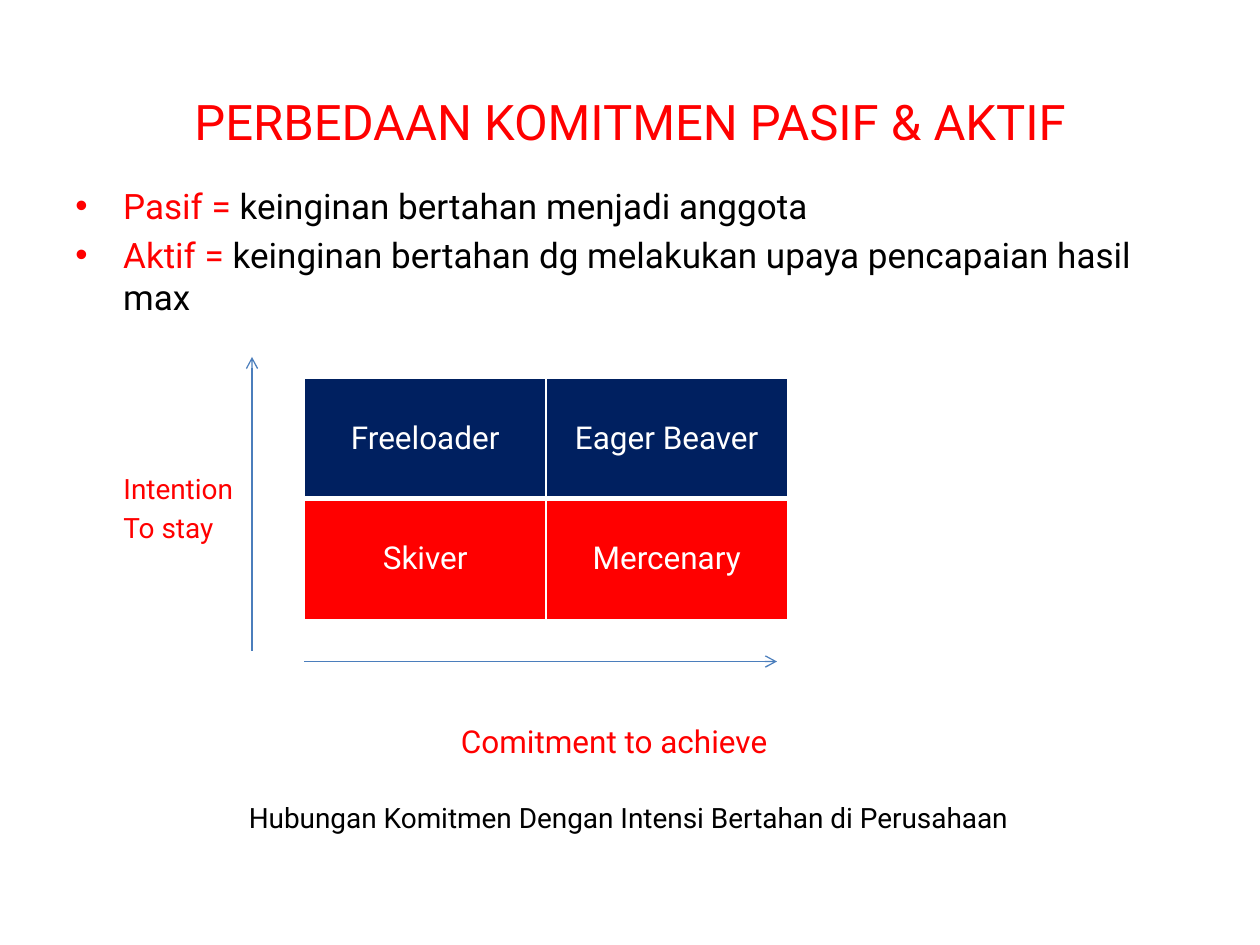
from lxml.etree import SubElement
from pptx import Presentation
from pptx.dml.color import RGBColor
from pptx.enum.shapes import MSO_CONNECTOR
from pptx.enum.text import MSO_ANCHOR, MSO_AUTO_SIZE, PP_ALIGN
from pptx.oxml.ns import qn
from pptx.util import Inches, Pt

COLORS = {"red": "FF0000", "navy": "002060", "black": "000000",
          "white": "FFFFFF", "axis": "4B7EBC"}
FONT = "Roboto"
UNITS_PER_INCH = 12
DEFINITIONS = [
    ("Pasif =", " keinginan bertahan menjadi anggota"),
    ("Aktif =", " keinginan bertahan dg melakukan upaya pencapaian hasil max"),
]
QUADRANTS = [
    ("navy", ("Freeloader", "Eager Beaver")),
    ("red", ("Skiver", "Mercenary")),
]
LABELS = [
    ((11.76, 44.9, 12, 8), ("Intention", "To stay"), 16, "red"),
    ((43.9, 68.8, 36, 4), ("Comitment to achieve",), 18, "red"),
    ((23.7, 76.2, 84, 4),
     ("Hubungan Komitmen Dengan Intensi Bertahan di Perusahaan",), 16, "black"),
]
AXES = [(29, 63, 74, 63), (24, 62, 24, 34)]


def grid(*units):
    """Convert grid units to slide lengths."""
    return [Inches(unit / UNITS_PER_INCH) for unit in units]


def rgb(name):
    """Return a named palette colour."""
    return RGBColor.from_string(COLORS[name])


def add_run(paragraph, text, size, color):
    """Append one formatted run."""
    run = paragraph.add_run()
    run.text = text
    run.font.name = FONT
    run.font.size = Pt(size)
    run.font.color.rgb = rgb(color)


def add_paragraph(frame, index, size):
    """Return the paragraph at an index, spaced from the one above."""
    if index == 0:
        return frame.paragraphs[0]
    paragraph = frame.add_paragraph()
    paragraph.space_before = Pt(size * 0.2)
    return paragraph


def add_bullet(paragraph):
    """Give a paragraph a red bullet with a hanging indent."""
    properties = paragraph._p.get_or_add_pPr()
    properties.set("marL", str(Inches(0.38)))
    properties.set("indent", str(-Inches(0.38)))
    color = SubElement(properties, qn("a:buClr"))
    SubElement(color, qn("a:srgbClr"), val=COLORS["red"])
    SubElement(properties, qn("a:buFont"), typeface="Arial")
    SubElement(properties, qn("a:buChar"), char="•")


def add_title(slide, text):
    """Place and fill the title placeholder."""
    title = slide.shapes.title
    title.left, title.top, title.width, title.height = grid(6, 8, 108, 7)
    frame = title.text_frame
    frame.auto_size = MSO_AUTO_SIZE.NONE
    frame.vertical_anchor = MSO_ANCHOR.MIDDLE
    heading = frame.paragraphs[0]
    heading.alignment = PP_ALIGN.CENTER
    add_run(heading, text, 28, "red")


def add_definitions(slide):
    """Add the bulleted definitions of both kinds of commitment."""
    frame = slide.shapes.add_textbox(*grid(6, 17, 108, 15)).text_frame
    frame.word_wrap = True
    for index, (term, meaning) in enumerate(DEFINITIONS):
        paragraph = add_paragraph(frame, index, 20)
        add_bullet(paragraph)
        add_run(paragraph, term, 20, "red")
        add_run(paragraph, meaning, 20, "black")


def add_label(slide, place, lines, size, color):
    """Add a label without insets."""
    frame = slide.shapes.add_textbox(*grid(*place)).text_frame
    frame.word_wrap = True
    frame.margin_left = frame.margin_right = 0
    frame.margin_top = frame.margin_bottom = 0
    for index, line in enumerate(lines):
        add_run(add_paragraph(frame, index, size), line, size, color)


def add_axis(slide, ends):
    """Add an axis line with an open arrowhead at its end."""
    axis = slide.shapes.add_connector(MSO_CONNECTOR.STRAIGHT, *grid(*ends))
    axis.line.color.rgb = rgb("axis")
    axis.line.width = Pt(0.75)
    SubElement(axis.line._get_or_add_ln(), qn("a:tailEnd"), type="arrow")
    SubElement(axis._element.spPr, qn("a:effectLst"))


def add_border(cell, side, width):
    """Draw one white cell border."""
    border = SubElement(cell._tc.get_or_add_tcPr(), qn(f"a:{side}"), w=str(Pt(width)))
    fill = SubElement(border, qn("a:solidFill"))
    SubElement(fill, qn("a:srgbClr"), val=COLORS["white"])


def fill_quadrant(cell, name, color, divider):
    """Write, border and fill one quadrant."""
    cell.vertical_anchor = MSO_ANCHOR.MIDDLE
    paragraph = cell.text_frame.paragraphs[0]
    paragraph.alignment = PP_ALIGN.CENTER
    add_run(paragraph, name, 18, "white")
    for side, width in (("lnL", 1), ("lnR", 1), ("lnT", divider[0]), ("lnB", divider[1])):
        add_border(cell, side, width)
    cell.fill.solid()
    cell.fill.fore_color.rgb = rgb(color)


def add_matrix(slide):
    """Add the two-by-two commitment matrix."""
    matrix = slide.shapes.add_table(2, 2, *grid(29, 36, 46, 23)).table
    dividers = [(1, 3), (3, 1)]
    for row, (color, names) in enumerate(QUADRANTS):
        for column, name in enumerate(names):
            fill_quadrant(matrix.cell(row, column), name, color, dividers[row])


def main():
    """Build and save the slide."""
    deck = Presentation()
    deck.slide_width, deck.slide_height = grid(120, 90)
    slide = deck.slides.add_slide(deck.slide_layouts[5])
    add_title(slide, "PERBEDAAN KOMITMEN PASIF & AKTIF")
    add_definitions(slide)
    for label in LABELS:
        add_label(slide, *label)
    for ends in AXES:
        add_axis(slide, ends)
    add_matrix(slide)
    deck.save("out.pptx")


if __name__ == "__main__":
    main()
